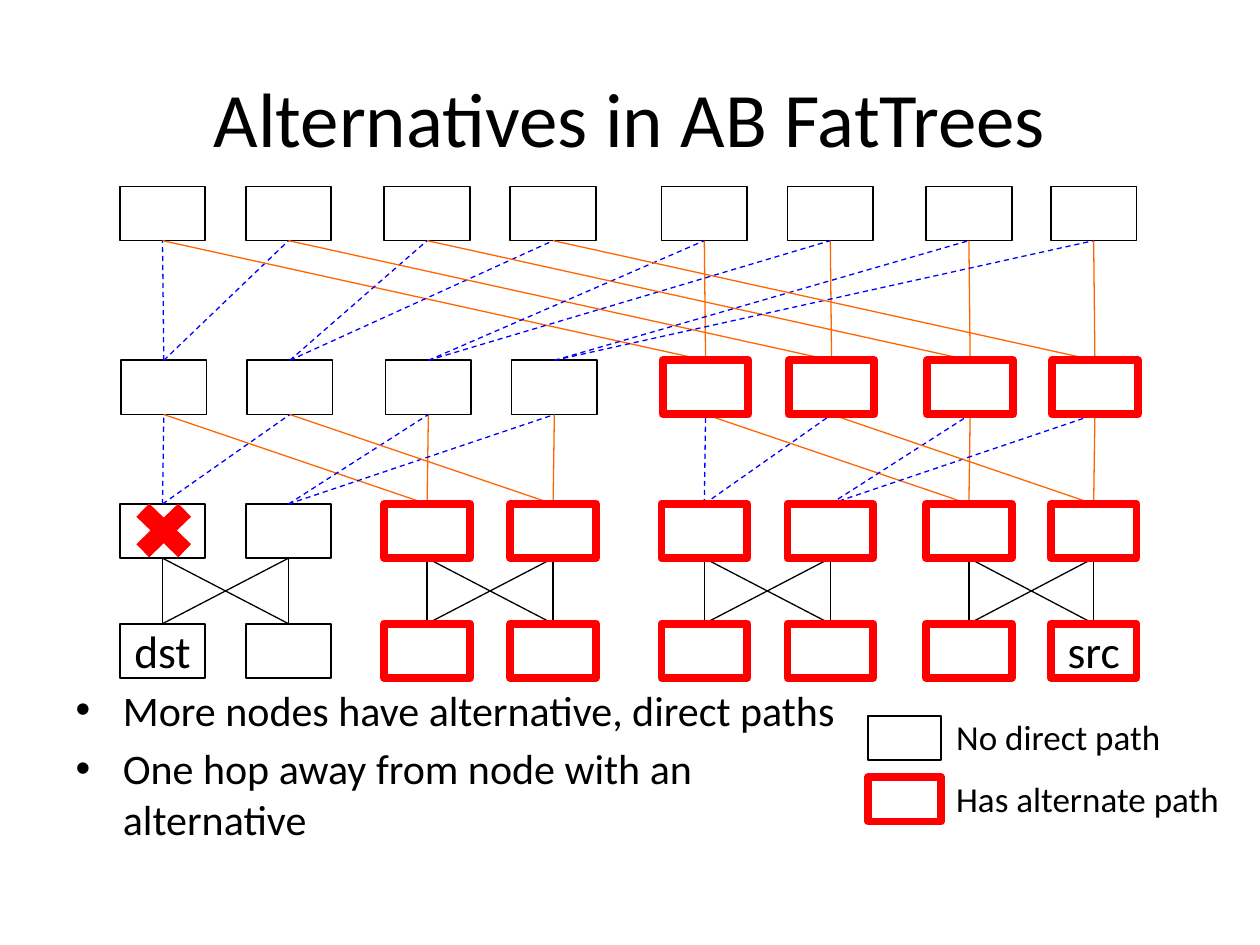
from lxml import etree
from pptx import Presentation
from pptx.dml.color import RGBColor
from pptx.enum import dml, shapes, text
from pptx.oxml.ns import qn
from pptx.util import Inches, Pt

BLACK = RGBColor(0x00, 0x00, 0x00)
RED = RGBColor(0xFF, 0x00, 0x00)
BLUE = RGBColor(0x00, 0x00, 0xFF)
ORANGE = RGBColor(0xFF, 0x66, 0x00)
TOP, BOTTOM = 0, 2


def write(frame, content, size=20, align=text.PP_ALIGN.LEFT, anchor=text.MSO_ANCHOR.TOP, gap=0):
    frame.text = content
    frame.word_wrap = True
    frame.vertical_anchor = anchor
    for index, paragraph in enumerate(frame.paragraphs):
        paragraph.alignment = align
        paragraph.space_before = Pt(gap if index else 0)
        paragraph.font.size = Pt(size)
        paragraph.font.name = "Calibri"
        paragraph.font.color.rgb = BLACK


def add_box(left, top, width, height, has_path):
    box = slide.shapes.add_shape(
        shapes.MSO_SHAPE.RECTANGLE, Inches(left), Inches(top), Inches(width), Inches(height))
    box.shadow.inherit = False
    box.fill.background()
    box.line.color.rgb = RED if has_path else BLACK
    box.line.width = Pt(4.5 if has_path else 1)
    return box


presentation = Presentation()
presentation.slide_width = Inches(10)
presentation.slide_height = Inches(7.5)
slide = presentation.slides.add_slide(presentation.slide_layouts[1])

title = slide.shapes.title
title.left, title.top, title.width, title.height = map(Inches, (0.5, 0.3, 9, 1.25))
write(title.text_frame, "Alternatives in AB FatTrees", size=44,
      align=text.PP_ALIGN.CENTER, anchor=text.MSO_ANCHOR.MIDDLE)

body = slide.placeholders[1]
body.left, body.top, body.width, body.height = map(Inches, (0.5, 5.38, 6.27, 1.32))
write(body.text_frame,
      "More nodes have alternative, direct paths\nOne hop away from node with an alternative",
      size=24, gap=4.8)

column_lefts = [0.95, 1.95, 3.05, 4.05, 5.25, 6.25, 7.35, 8.34]
levels = [
    ("core", 1.48, 0, 8),
    ("aggregation", 2.86, 0.01, 4),
    ("edge", 4, 0, 2),
    ("host", 4.95, 0, 2),
]
nodes = {}
red_nodes = []
for level, top, shift, first_red in levels:
    nodes[level] = []
    for column, left in enumerate(column_lefts):
        has_path = column >= first_red
        node = add_box(left + shift, top, 0.68, 0.43, has_path)
        nodes[level].append(node)
        if has_path:
            red_nodes.append(node)

for column, name in [(0, "dst"), (7, "src")]:
    write(nodes["host"][column].text_frame, name, size=26,
          align=text.PP_ALIGN.CENTER, anchor=text.MSO_ANCHOR.MIDDLE)

link_rules = [
    ("host", "edge", 2, BLACK, BLACK),
    ("edge", "aggregation", 4, BLUE, ORANGE),
    ("aggregation", "core", 8, BLUE, ORANGE),
]
for lower, upper, group, near_color, far_color in link_rules:
    half = group // 2
    for start in range(0, 8, group):
        for index in range(half):
            links = [
                (index, 2 * index, near_color),
                (index, 2 * index + 1, near_color),
                (half + index, index, far_color),
                (half + index, half + index, far_color),
            ]
            for source, target, color in links:
                link = slide.shapes.add_connector(shapes.MSO_CONNECTOR.STRAIGHT, 0, 0, 0, 0)
                link.begin_connect(nodes[lower][start + source], TOP)
                link.end_connect(nodes[upper][start + target], BOTTOM)
                link.line.color.rgb = color
                link.line.width = Pt(0.75)
                if color == BLUE:
                    link.line.dash_style = dml.MSO_LINE.DASH
                etree.SubElement(link._element.spPr, qn("a:effectLst"))

for node in red_nodes:
    node._element.getparent().append(node._element)

failure = slide.shapes.add_shape(
    shapes.MSO_SHAPE.MATH_MULTIPLY, Inches(0.98), Inches(3.9), Inches(0.64), Inches(0.62))
failure.adjustments[0] = 0.235
failure.shadow.inherit = False
failure.fill.solid()
failure.fill.fore_color.rgb = RED
failure.line.fill.background()

legend = [("No direct path", 5.68, False), ("Has alternate path", 6.17, True)]
for caption, top, has_path in legend:
    add_box(6.89, top, 0.58, 0.35, has_path)
    label = slide.shapes.add_textbox(Inches(7.49), Inches(top - 0.05), Inches(2.32), Inches(0.44))
    write(label.text_frame, caption)

presentation.save("out.pptx")
